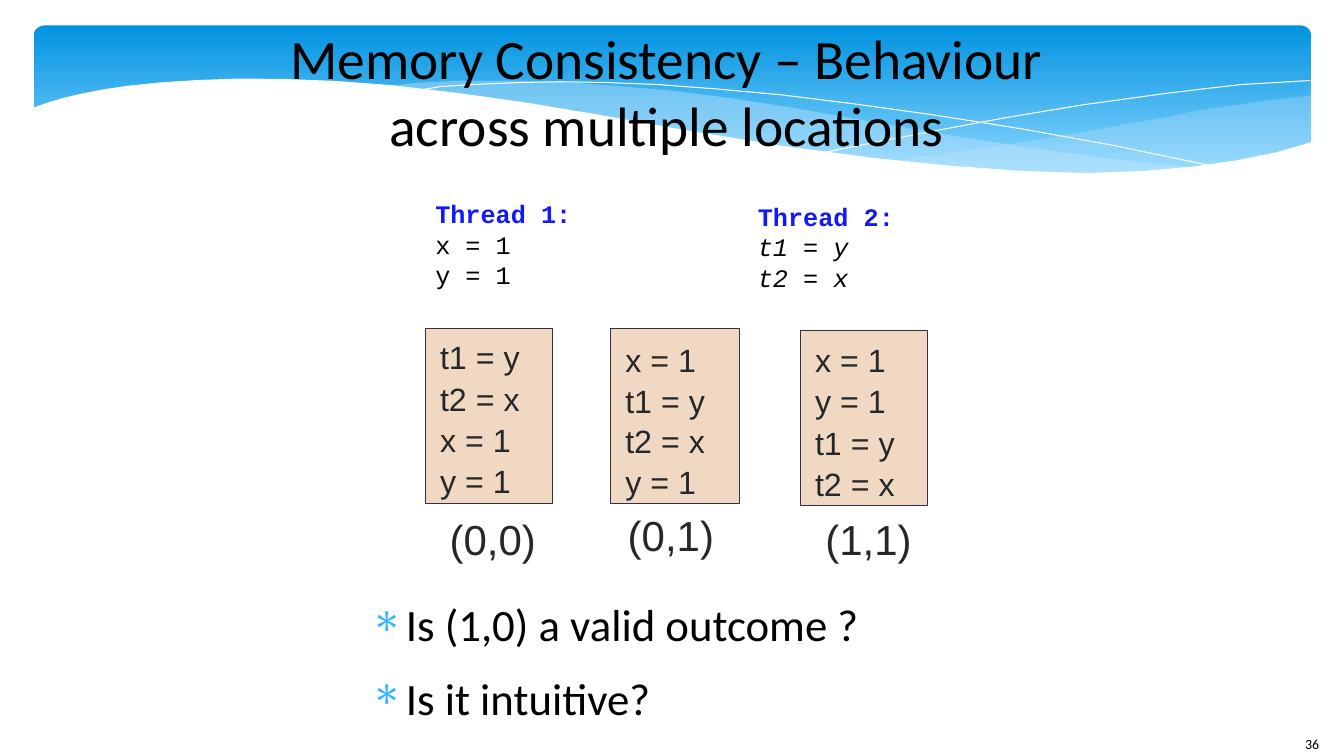
from lxml import etree
from pptx import Presentation
from pptx.dml.color import RGBColor
from pptx.enum.shapes import MSO_SHAPE
from pptx.enum.text import MSO_ANCHOR, PP_ALIGN
from pptx.oxml.ns import qn
from pptx.util import Cm, Pt

ROUNDED, RECTANGLE = MSO_SHAPE.ROUNDED_RECTANGLE, MSO_SHAPE.RECTANGLE
MIDDLE, CENTER, LEFT = MSO_ANCHOR.MIDDLE, PP_ALIGN.CENTER, PP_ALIGN.LEFT
BLANK_LAYOUT = 6

# Content
TITLE = "Memory Consistency – Behaviour across multiple locations"
QUESTIONS = ["Is (1,0) a valid outcome\u00a0?", "Is it intuitive?"]
SLIDE_NUMBER = "36"
THREADS = [
    {"heading": "Thread 1:", "code": ["x = 1", "y = 1"], "italic": False,
     "box": (10.72, 4.88, 5.72, 3.33)},
    {"heading": "Thread 2:", "code": ["t1 = y", "t2 = x"], "italic": True,
     "box": (18.85, 4.95, 5.72, 2.57)},
]
# Each card: box, first row top, row pitch, then the outcome and its corner
ORDERINGS = [
    {"rows": ["x = 1", "y = 1", "t1 = y", "t2 = x"], "box": (20.17, 8.33, 3.2, 4.42),
     "first": 8.58, "pitch": 1.04, "outcome": "(1,1)", "corner": (20.8, 12.95)},
    {"rows": ["x = 1", "t1 = y", "t2 = x", "y = 1"], "box": (15.39, 8.28, 3.25, 4.42),
     "first": 8.58, "pitch": 1.02, "outcome": "(0,1)", "corner": (15.82, 12.83)},
    {"rows": ["t1 = y", "t2 = x", "x = 1", "y = 1"], "box": (10.72, 8.28, 3.2, 4.42),
     "first": 8.51, "pitch": 1.04, "outcome": "(0,0)", "corner": (11.33, 12.95)},
]

# Banner outlines in centimetres
RIGHT_WAVE = [
    (33.05, 2.4), (31.65, 2.57), (30.18, 2.79), (29.13, 3), (27.25, 3.33), (25.53, 3.62),
    (23.9, 3.86), (22.4, 4.06), (23.88, 4.19), (25.22, 4.29), (26.44, 4.36), (27.56, 4.38),
    (28.6, 4.35), (29.54, 4.28), (30.38, 4.19), (31.19, 4.06), (31.93, 3.91), (33.05, 3.6)]
CENTRAL_WAVE = [
    (30.23, 4.24), (28.35, 4.04), (26.26, 3.77), (23.9, 3.4), (21.31, 2.95), (19.76, 2.68),
    (18.31, 2.46), (16.99, 2.29), (15.72, 2.18), (14.22, 2.07), (12.85, 2.03), (11.66, 2.03),
    (10.62, 2.08), (9.7, 2.17), (10.95, 2.3), (12.27, 2.47), (13.69, 2.68), (15.21, 2.94),
    (17.93, 3.42), (19.79, 3.72), (21.49, 3.95), (23.04, 4.13), (24.46, 4.26), (25.76, 4.34),
    (26.95, 4.38), (28.04, 4.38), (29.03, 4.35)]
FALLING_LINE = [
    (10.46, 2.29), (11.12, 2.18), (11.94, 2.13), (13.11, 2.08), (14.1, 2.06), (15.24, 2.08),
    (16.56, 2.13), (18.03, 2.24), (19.69, 2.39), (21.54, 2.62), (23.55, 2.9), (25.76, 3.25),
    (28.14, 3.68), (30.73, 4.22)]
RISING_LINE = [
    (20.78, 3.84), (22.1, 3.58), (23.55, 3.3), (25.32, 2.97), (27.31, 2.64), (29.34, 2.36),
    (30.33, 2.24), (31.29, 2.13), (32.18, 2.08), (33.02, 2.03)]
WHITE_WAVE = [
    (33.09, 3.57), (32.16, 3.84), (31.17, 4.04), (30.05, 4.2), (28.8, 4.31), (27.38, 4.36),
    (25.78, 4.31), (23.98, 4.18), (21.92, 3.97), (19.61, 3.66), (17.04, 3.24), (15.14, 2.9),
    (13.23, 2.58), (11.51, 2.34), (9.91, 2.15), (8.46, 2.04), (7.15, 1.99), (5.97, 1.98),
    (4.93, 2.02), (4.01, 2.08), (3.23, 2.16), (2.57, 2.26), (2.01, 2.37), (1.55, 2.48),
    (1.22, 2.58), (0.79, 2.73), (0.79, 5.68), (33.1, 5.68)]

THEME = {
    "banner": ("0293E0", "83D3FE"), "wave": "C6E7FC", "white": "FFFFFF",
    "card": "F0D8C2", "card_line": "323141", "bullet": "31B6FD",
    "title": {"name": "Calibri", "size": 39.6, "color": "000000"},
    "body": {"name": "Calibri", "size": 32, "color": "000000"},
    "number": {"name": "Calibri", "size": 10, "color": "000000"},
    "heading": {"name": "Courier New", "size": 18, "color": "1318F9", "bold": True},
    "code": {"name": "Courier New", "size": 18, "color": "000000"},
    "row": {"name": "Arial", "size": 23, "color": "24282B"},
    "outcome": {"name": "Arial", "size": 30, "color": "24282B"},
}

presentation = Presentation()
presentation.slide_width, presentation.slide_height = Cm(33.87), Cm(19.05)
slide = presentation.slides.add_slide(presentation.slide_layouts[BLANK_LAYOUT])


def color(code):
    return RGBColor.from_string(code)


def lengths(values):
    return [Cm(value) for value in values]


def apply_format(font, style):
    for name, value in style.items():
        if name == "color":
            font.color.rgb = color(value)
        else:
            setattr(font, name, Pt(value) if name == "size" else value)


def add_text(box, lines, inset=True, wrap=True, align=LEFT):
    """Add a text box from (text, style) lines and return its frame."""
    frame = slide.shapes.add_textbox(*lengths(box)).text_frame
    frame.word_wrap = wrap
    if not inset:
        for side in ("left", "top", "right", "bottom"):
            setattr(frame, "margin_" + side, 0)
    for index, (text, style) in enumerate(lines):
        paragraph = frame.paragraphs[0] if index == 0 else frame.add_paragraph()
        paragraph.alignment = align
        run = paragraph.add_run()
        run.text = text
        apply_format(run.font, style)
    return frame


def add_outline(points, fill=None, opacity=None):
    """Add a closed filled wave, or an open white hairline when fill is None."""
    start, *rest = [lengths(point) for point in points]
    builder = slide.shapes.build_freeform(*start)
    builder.add_line_segments(rest, close=fill is not None)
    shape = builder.convert_to_shape()
    shape.shadow.inherit = False
    if fill is None:
        shape.fill.background()
        shape.line.color.rgb = color(THEME["white"])
        shape.line.width = Pt(0)
        return
    shape.line.fill.background()
    shape.fill.solid()
    shape.fill.fore_color.rgb = color(fill)
    if opacity is not None:
        rgb = shape.fill._xPr.find(".//" + qn("a:srgbClr"))
        etree.SubElement(rgb, qn("a:alpha")).set("val", str(opacity * 1000))


# Banner
banner = slide.shapes.add_shape(ROUNDED, *lengths((0.85, 0.64, 32.2, 3.96)))
banner.adjustments[0] = 0.07
banner.shadow.inherit = False
banner.line.fill.background()
banner.fill.gradient()
banner.fill.gradient_angle = 270
for stop, code, position in zip(banner.fill.gradient_stops, THEME["banner"], (0, 0.9)):
    stop.color.rgb = color(code)
    stop.position = position
add_outline(RIGHT_WAVE, THEME["wave"], 29)
add_outline(CENTRAL_WAVE, THEME["wave"], 40)
add_outline(FALLING_LINE)
add_outline(RISING_LINE)
add_outline(WHITE_WAVE, THEME["white"])

# Slide number and title
add_text((32.64, 18.42, 2.08, 1.02), [(SLIDE_NUMBER, THEME["number"])])
title = add_text((6.5, 0.99, 20.6, 2.59), [(TITLE, THEME["title"])], inset=False, align=CENTER)
title.vertical_anchor = MIDDLE

# Questions
questions = add_text((9.04, 15.04, 20.6, 3.18),
                     [(text, THEME["body"]) for text in QUESTIONS], inset=False)
for paragraph in questions.paragraphs:
    paragraph.space_after = Pt(14.1)
    properties = paragraph._p.get_or_add_pPr()
    properties.set("marL", str(Cm(1.19)))
    properties.set("indent", str(-Cm(0.89)))
    bullet_color = etree.SubElement(properties, qn("a:buClr"))
    etree.SubElement(bullet_color, qn("a:srgbClr")).set("val", THEME["bullet"])
    etree.SubElement(properties, qn("a:buChar")).set("char", "∗")

# Threads
for thread in THREADS:
    code_style = {**THEME["code"], "italic": thread["italic"]}
    add_text(thread["box"], [(thread["heading"], THEME["heading"])]
             + [(line, code_style) for line in thread["code"]])

# Orderings with their outcomes
for ordering in ORDERINGS:
    card = slide.shapes.add_shape(RECTANGLE, *lengths(ordering["box"]))
    card.shadow.inherit = False
    card.fill.solid()
    card.fill.fore_color.rgb = color(THEME["card"])
    card.line.color.rgb = color(THEME["card_line"])
    card.line.width = Pt(0)
    row_left = ordering["box"][0] + 0.37
    for index, row in enumerate(ordering["rows"]):
        row_top = ordering["first"] + index * ordering["pitch"]
        row_width = 2.03 if row.startswith("t") else 1.8
        add_text((row_left, row_top, row_width, 0.99), [(row, THEME["row"])],
                 inset=False, wrap=False)
    add_text((*ordering["corner"], 2.18, 1.3), [(ordering["outcome"], THEME["outcome"])],
             inset=False, wrap=False)

presentation.save("out.pptx")
